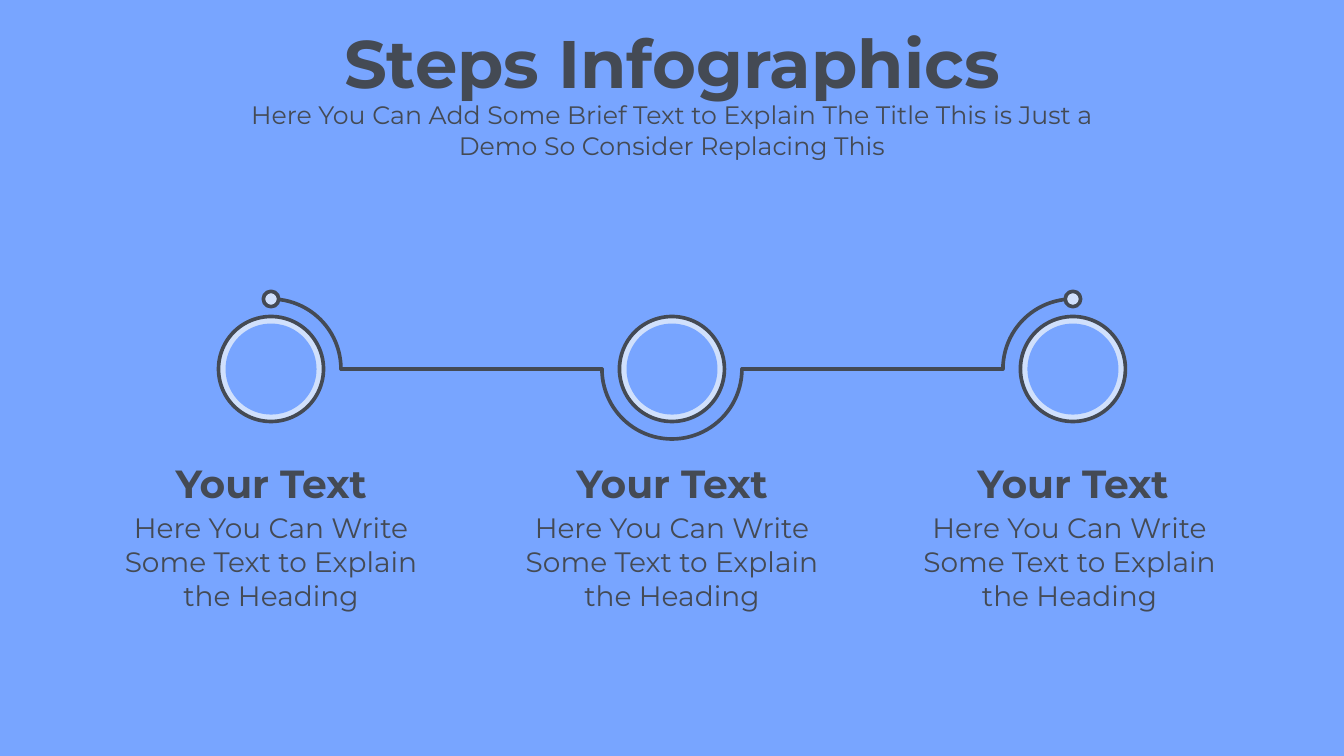
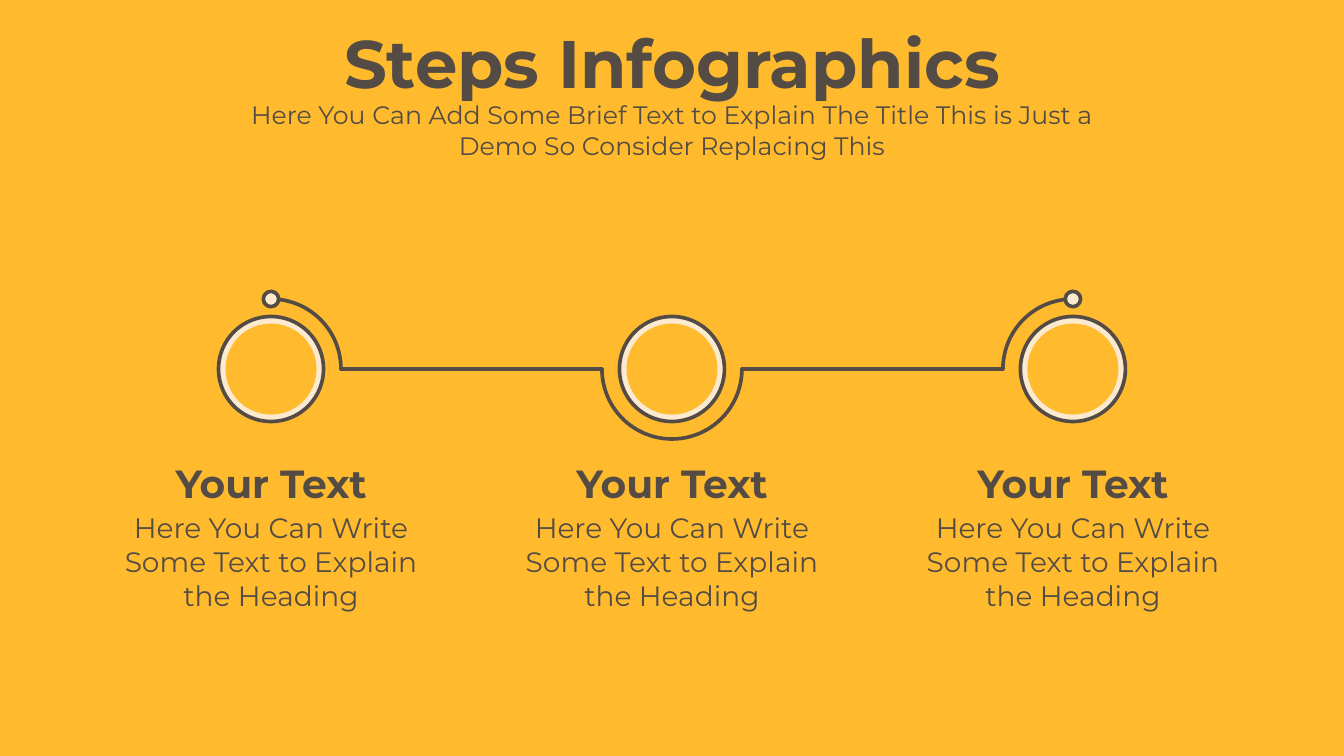
from pptx import Presentation
from pptx.dml.color import RGBColor
from pptx.enum import shapes, text
from pptx.oxml import ns
from pptx.oxml import xmlchemy
from pptx.util import Pt

FONT = "Montserrat"
STROKE = 2.6
STEP_WIDTH = 238.4
RING, DISC, DOT, ORBIT = 75, 65, 11, 50

THEMES = [
    {"page": "78A5FF", "ink": "444A54", "tint": "D0E0FC"},
    {"page": "FFBB2D", "ink": "544C44", "tint": "FCEAD0"},
]
LAST_BODY_SHIFTS = [-2.4, 0]

TITLE = "Steps Infographics"
SUBTITLE = ("Here You Can Add Some Brief Text to Explain The Title "
            "This is Just a Demo So Consider Replacing This")
STEPS = [("Your Text", "Here You Can Write Some Text to Explain\nthe Heading")] * 3
ARCS = [(270, 0), (0, 180), (180, 270)]
HEADER_BOX = (165.6, 11.5, 628.8, 107)
STEPS_BOX = (74.4, 206, 811.2, 236)


def rgb(value):
    return RGBColor.from_string(value)


def add_text(page, box, words, size, ink, bold=False):
    shape = page.shapes.add_textbox(*map(Pt, box))
    frame = shape.text_frame
    frame.word_wrap = True
    frame.auto_size = text.MSO_AUTO_SIZE.SHAPE_TO_FIT_TEXT
    frame.text = words
    for para in frame.paragraphs:
        para.alignment = text.PP_ALIGN.CENTER
        for span in para.runs:
            span.font.name = FONT
            span.font.size = Pt(size)
            span.font.bold = bold
            span.font.color.rgb = rgb(ink)


def stroke(shape, ink):
    shape.line.color.rgb = rgb(ink)
    shape.line.width = Pt(STROKE)
    shape._element.spPr.find(ns.qn("a:ln")).set("cap", "rnd")


def add_round(page, kind, x, y, diameter, fill=None, ink=None):
    corner = (x - diameter / 2, y - diameter / 2)
    shape = page.shapes.add_shape(kind, *map(Pt, (*corner, diameter, diameter)))
    shape.shadow.inherit = False
    if fill:
        shape.fill.solid()
        shape.fill.fore_color.rgb = rgb(fill)
    else:
        shape.fill.background()
    if ink:
        stroke(shape, ink)
    else:
        shape.line.fill.background()
    return shape


def add_circle(page, x, y, diameter, fill, ink=None):
    add_round(page, shapes.MSO_SHAPE.OVAL, x, y, diameter, fill, ink)


def add_arc(page, x, y, angles, ink):
    arc = add_round(page, shapes.MSO_SHAPE.ARC, x, y, 2 * ORBIT, ink=ink)
    for index, degrees in enumerate(angles):
        arc.adjustments[index] = degrees * 0.6


def add_link(page, start, end, y, ink):
    link = page.shapes.add_connector(
        shapes.MSO_CONNECTOR.STRAIGHT, Pt(start), Pt(y), Pt(end), Pt(y))
    stroke(link, ink)
    link._element.spPr.append(xmlchemy.OxmlElement("a:effectLst"))


def add_header(page, box, theme):
    left, top, width, height = box
    inset = 34.4
    add_text(page, (left + inset, top, width - 2 * inset, 65.5),
             TITLE, 48, theme["ink"], bold=True)
    add_text(page, (left, top + 56.2, width, height - 56.2),
             SUBTITLE, 18, theme["ink"])


def add_step(page, box, step, angles, theme, body_shift):
    left, top, width, height = box
    heading, body = step
    x, y = left + width / 2, top + 57.6
    add_arc(page, x, y, angles, theme["ink"])
    add_circle(page, x, y, RING, theme["tint"], theme["ink"])
    add_circle(page, x, y, DISC, theme["page"])
    if 270 in angles:
        add_circle(page, x, y - ORBIT, DOT, theme["tint"], theme["ink"])
    add_text(page, (left + 20, top + 118.7, width - 40, 41),
             heading, 28, theme["ink"], bold=True)
    add_text(page, (left + body_shift, top + 155.4, width, height - 155.4),
             body, 20, theme["ink"])


def add_steps(page, box, theme, last_body_shift):
    left, top, width, height = box
    last = len(STEPS) - 1
    pitch = (width - STEP_WIDTH) / last
    for index, (step, angles) in enumerate(zip(STEPS, ARCS)):
        step_left = left + index * pitch
        x = step_left + STEP_WIDTH / 2
        if index < last:
            add_link(page, x + ORBIT, x + pitch - ORBIT, top + 57.6, theme["ink"])
        add_step(page, (step_left, top, STEP_WIDTH, height), step, angles, theme,
                 last_body_shift if index == last else 0)


def add_page(deck, theme, last_body_shift):
    page = deck.slides.add_slide(deck.slide_layouts[6])
    page.background.fill.solid()
    page.background.fill.fore_color.rgb = rgb(theme["page"])
    add_steps(page, STEPS_BOX, theme, last_body_shift)
    add_header(page, HEADER_BOX, theme)


def main():
    deck = Presentation()
    deck.slide_width, deck.slide_height = Pt(960), Pt(540)
    for theme, shift in zip(THEMES, LAST_BODY_SHIFTS):
        add_page(deck, theme, shift)
    deck.save("out.pptx")


if __name__ == "__main__":
    main()
